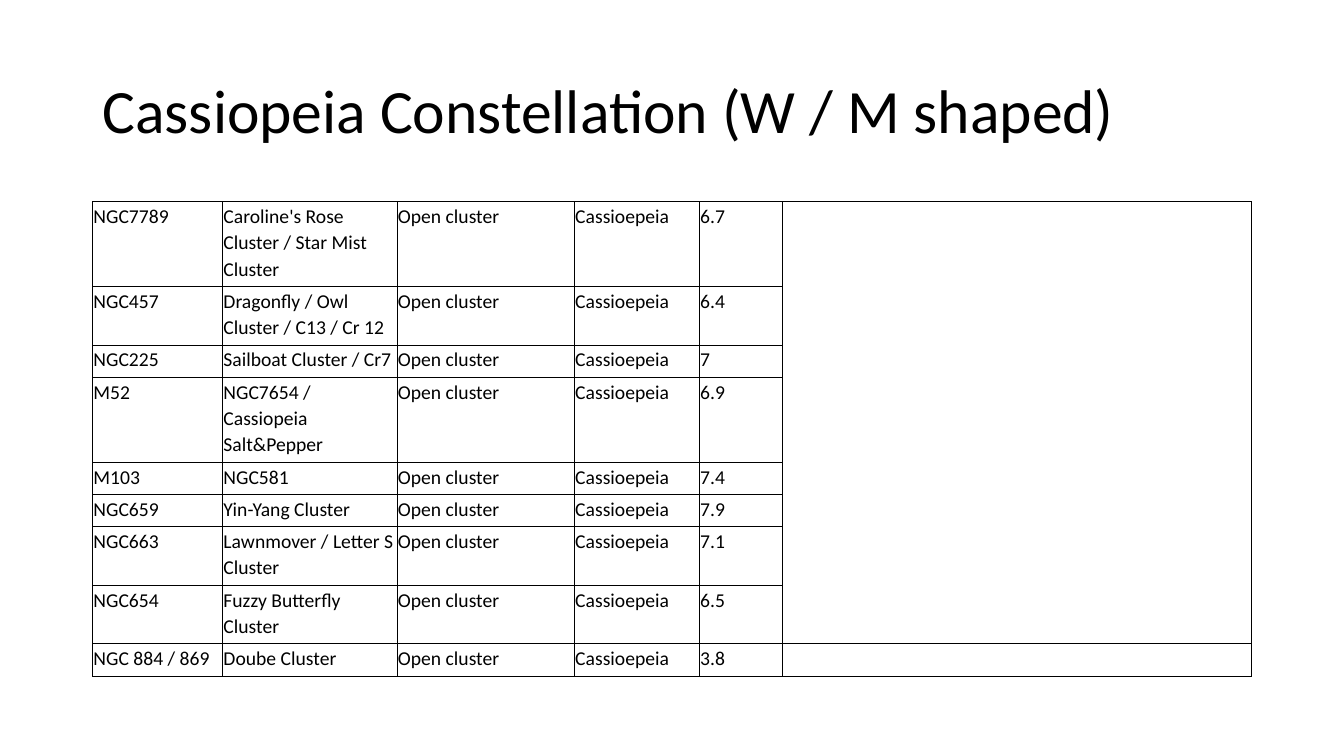
from dataclasses import dataclass

from lxml.etree import SubElement
from pptx import Presentation
from pptx.dml.color import RGBColor as RGB
from pptx.enum.text import MSO_ANCHOR as ANCHOR, PP_ALIGN as ALIGN
from pptx.oxml.ns import qn
from pptx.util import Inches, Pt


@dataclass(frozen=True)
class Theme:
    font: str = "Calibri"
    ink: str = "000000"
    title_size: int = 44
    cell_size: int = 14
    title_spacing: float = 0.9
    cell_spacing: float = 1.1
    border: float = 0.5
    line_height: float = 0.21


CLUSTERS = [
    ("NGC7789", "Caroline's Rose Cluster / Star Mist Cluster", "6.7", 3),
    ("NGC457", "Dragonfly / Owl Cluster / C13 / Cr 12", "6.4", 2),
    ("NGC225", "Sailboat Cluster / Cr7", "7", 1),
    ("M52", "NGC7654 / Cassiopeia Salt&Pepper", "6.9", 3),
    ("M103", "NGC581", "7.4", 1),
    ("NGC659", "Yin-Yang Cluster", "7.9", 1),
    ("NGC663", "Lawnmover / Letter S Cluster", "7.1", 2),
    ("NGC654", "Fuzzy Butterfly Cluster", "6.5", 2),
    ("NGC 884 / 869", "Doube Cluster", "3.8", 1),
]
COLUMNS = [1.29, 1.73, 1.76, 1.24, 0.82, 4.66]


def apply(obj, formats):
    for name, value in formats.items():
        setattr(obj, name, value)


class Deck:
    def __init__(self, theme):
        self.theme = theme
        self.prs = Presentation()
        apply(self.prs, {"slide_width": Inches(13.33), "slide_height": Inches(7.5)})
        self.s = self.prs.slides.add_slide(self.prs.slide_layouts[5])

    def box(self, left, top, width, height):
        w, h = self.prs.slide_width, self.prs.slide_height
        shares = {"left": left * w, "top": top * h, "width": width * w, "height": height * h}
        return {name: int(value / 100) for name, value in shares.items()}

    def text(self, p, text, size, spacing):
        apply(p, {"alignment": ALIGN.LEFT, "line_spacing": spacing})
        if not text:
            SubElement(p._p, qn("a:endParaRPr"), sz=str(size * 100))
            return
        r = p.add_run()
        r.text = text
        apply(r.font, {"name": self.theme.font, "size": Pt(size)})
        r.font.color.rgb = RGB.from_string(self.theme.ink)

    def title(self, text, *area):
        sp = self.s.shapes.title
        apply(sp, self.box(*area))
        tf = sp.text_frame
        apply(tf, {"vertical_anchor": ANCHOR.MIDDLE, "word_wrap": True})
        self.text(tf.paragraphs[0], text, self.theme.title_size, self.theme.title_spacing)

    def borders(self, cell):
        tc_pr = cell._tc.get_or_add_tcPr()
        for side in ("lnL", "lnR", "lnT", "lnB"):
            ln = SubElement(tc_pr, qn(f"a:{side}"), w=str(Pt(self.theme.border)))
            fill = SubElement(ln, qn("a:solidFill"))
            SubElement(fill, qn("a:srgbClr"), val=self.theme.ink)

    def cell(self, cell, text):
        edge = Inches(0.01)
        apply(cell, {"margin_left": edge, "margin_right": edge, "margin_top": edge,
                     "margin_bottom": Inches(0.05), "vertical_anchor": ANCHOR.TOP})
        if not cell.is_spanned:
            self.borders(cell)
        cell.fill.background()
        self.text(cell.text_frame.paragraphs[0], text,
                  self.theme.cell_size, self.theme.cell_spacing)

    def table(self, rows, lines, columns, *area):
        box = self.box(*area)
        table = self.s.shapes.add_table(len(rows), len(columns), **box).table
        apply(table, {"first_row": False, "horz_banding": False})
        for column, weight in zip(table.columns, columns):
            column.width = int(box["width"] * weight / sum(columns))
        for row, count in zip(table.rows, lines):
            row.height = Inches(self.theme.line_height * count)
        last = len(columns) - 1
        table.cell(0, last).merge(table.cell(len(rows) - 2, last))
        for row, texts in zip(table.rows, rows):
            for cell, text in zip(row.cells, texts):
                self.cell(cell, text)


def main():
    deck = Deck(Theme())
    deck.title("Cassiopeia Constellation (W / M shaped)", 6.88, 5.32, 86.25, 19.33)
    rows = [(code, name, "Open cluster", "Cassioepeia", magnitude, "")
            for code, name, magnitude, _ in CLUSTERS]
    lines = [count for *_, count in CLUSTERS]
    deck.table(rows, lines, COLUMNS, 6.88, 26.67, 86.25, 46.93)
    deck.prs.save("out.pptx")


if __name__ == "__main__":
    main()
